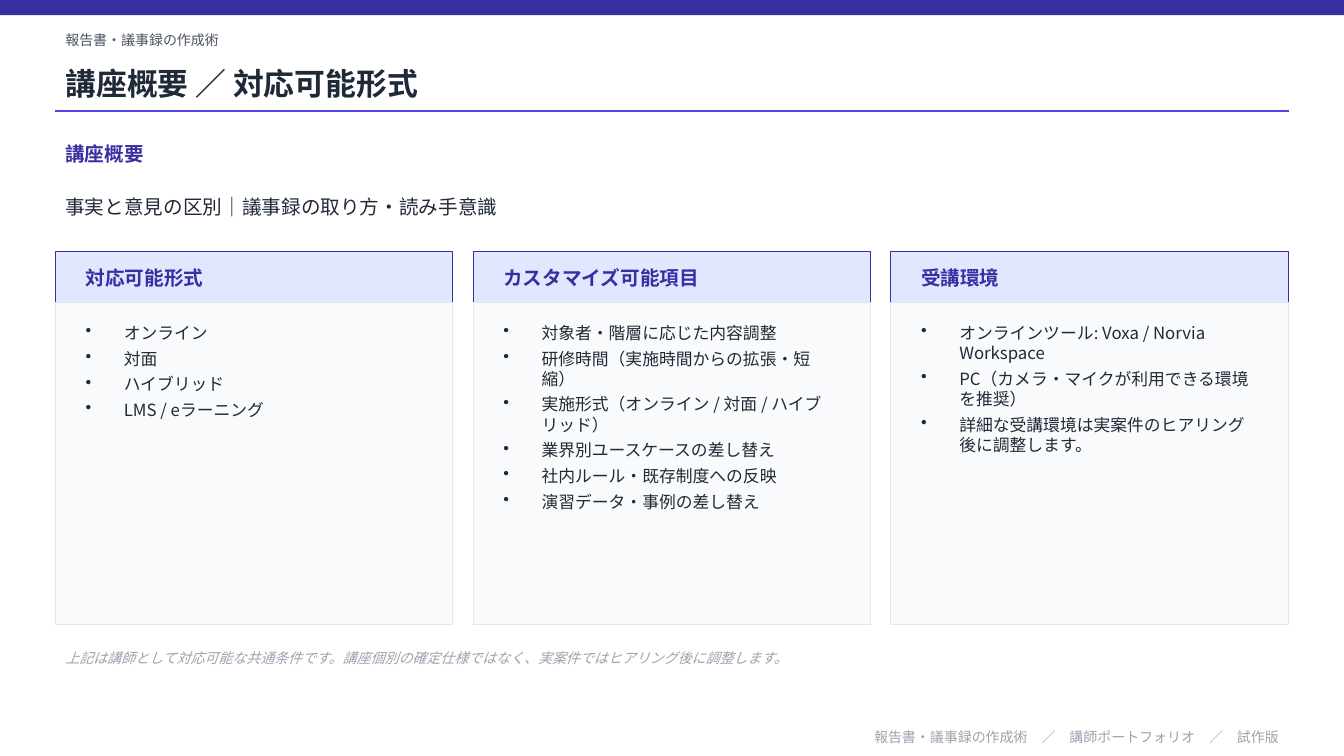
from lxml.etree import SubElement
from pptx import Presentation
from pptx.dml.color import RGBColor
from pptx.enum.shapes import MSO_CONNECTOR as Connector, MSO_SHAPE as Shape
from pptx.enum.text import MSO_ANCHOR as Anchor, MSO_AUTO_SIZE as AutoSize, PP_ALIGN as Align
from pptx.oxml.ns import qn
from pptx.util import Inches, Pt

# Content
COURSE = "報告書・議事録の作成術"
TITLE = "講座概要 ／ 対応可能形式"
SECTION = "講座概要"
SUMMARY = "事実と意見の区別｜議事録の取り方・読み手意識"
CARDS = [
    ("対応可能形式", ["オンライン", "対面", "ハイブリッド", "LMS / eラーニング"]),
    ("カスタマイズ可能項目", [
        "対象者・階層に応じた内容調整",
        "研修時間（実施時間からの拡張・短縮）",
        "実施形式（オンライン / 対面 / ハイブリッド）",
        "業界別ユースケースの差し替え",
        "社内ルール・既存制度への反映",
        "演習データ・事例の差し替え",
    ]),
    ("受講環境", [
        "オンラインツール: Voxa / Norvia Workspace",
        "PC（カメラ・マイクが利用できる環境を推奨）",
        "詳細な受講環境は実案件のヒアリング後に調整します。",
    ]),
]
NOTE = "上記は講師として対応可能な共通条件です。講座個別の確定仕様ではなく、実案件ではヒアリング後に調整します。"
FOOTER = COURSE + "　／　講師ポートフォリオ　／　試作版"

# Style and layout
FONT = "Noto Sans CJK JP"
INDIGO, VIOLET, PALE = "3730A3", "4F46E5", "E0E7FF"
INK, SLATE, MUTED = "1F2937", "4B5563", "9CA3AF"
PANEL, BORDER = "F9FAFB", "E5E7EB"
PAGE_WIDTH, PAGE_HEIGHT = 13.33, 7.5
MARGIN, GAP, PADDING = 0.55, 0.2, 0.2
CONTENT_WIDTH = PAGE_WIDTH - 2 * MARGIN
CARD_WIDTH = (CONTENT_WIDTH - GAP * (len(CARDS) - 1)) / len(CARDS)
HEAD_TOP, HEAD_HEIGHT, BODY_HEIGHT = 2.5, 0.5, 3.2
BODY_TOP = HEAD_TOP + HEAD_HEIGHT


def color(value):
    return RGBColor.from_string(value)


def add_bullet(para):
    props = para._p.get_or_add_pPr()
    props.set("marL", str(Inches(0.38)))
    props.set("indent", str(-Inches(0.38)))
    SubElement(props, qn("a:buChar")).set("char", "•")


def write(box, lines, size=10, ink=INK, bold=False, italic=False,
          align=Align.LEFT, anchor=Anchor.MIDDLE, bullets=False):
    frame = box.text_frame
    frame.word_wrap = True
    frame.auto_size = AutoSize.NONE
    frame.vertical_anchor = anchor
    for index, line in enumerate(lines):
        para = frame.paragraphs[0] if index == 0 else frame.add_paragraph()
        para.alignment = align
        if bullets:
            add_bullet(para)
            para.space_after = Pt(4)
        span = para.add_run()
        span.text = line
        font = span.font
        font.size, font.bold, font.italic = Pt(size), bold, italic
        font.color.rgb = color(ink)
        font.name = FONT
        SubElement(span._r.get_or_add_rPr(), qn("a:ea")).set("typeface", FONT)


def add_text(page, lines, left, top, width, height, **style):
    box = page.shapes.add_textbox(*map(Inches, (left, top, width, height)))
    write(box, lines, **style)


def add_block(page, left, top, width, height, fill, line=None):
    block = page.shapes.add_shape(Shape.RECTANGLE, *map(Inches, (left, top, width, height)))
    block.shadow.inherit = False
    block.fill.solid()
    block.fill.fore_color.rgb = color(fill)
    if line:
        block.line.color.rgb = color(line)
        block.line.width = Pt(0.75)
    else:
        block.line.fill.background()


def add_card(page, left, heading, items):
    text_left, text_width = left + PADDING, CARD_WIDTH - 2 * PADDING
    add_block(page, left, HEAD_TOP, CARD_WIDTH, HEAD_HEIGHT, PALE, INDIGO)
    add_text(page, [heading], text_left, HEAD_TOP, text_width, HEAD_HEIGHT,
             size=14, ink=INDIGO, bold=True)
    add_block(page, left, BODY_TOP, CARD_WIDTH, BODY_HEIGHT, PANEL, BORDER)
    add_text(page, items, text_left, BODY_TOP + 0.15, text_width, BODY_HEIGHT - 0.35,
             size=12, anchor=Anchor.TOP, bullets=True)


def main():
    deck = Presentation()
    deck.slide_width, deck.slide_height = Inches(PAGE_WIDTH), Inches(PAGE_HEIGHT)
    page = deck.slides.add_slide(deck.slide_layouts[5])

    # Header
    add_block(page, 0, 0, PAGE_WIDTH, 0.15, INDIGO)
    add_text(page, [COURSE], MARGIN, 0.25, CONTENT_WIDTH, 0.3, ink=SLATE)
    title = page.shapes.title
    title.left, title.top, title.width, title.height = map(
        Inches, (MARGIN, 0.55, CONTENT_WIDTH, 0.55))
    write(title, [TITLE], size=22, bold=True)
    rule = page.shapes.add_connector(Connector.STRAIGHT, *map(
        Inches, (MARGIN, 1.1, MARGIN + CONTENT_WIDTH, 1.1)))
    rule.line.color.rgb = color(VIOLET)
    rule.line.width = Pt(1)
    SubElement(rule._element.spPr, qn("a:effectLst"))

    # Overview
    add_text(page, [SECTION], MARGIN, 1.35, CONTENT_WIDTH, 0.35,
             size=14, ink=INDIGO, bold=True)
    add_text(page, [SUMMARY], MARGIN, 1.75, CONTENT_WIDTH, 0.6, size=14)

    # Cards
    for index, (heading, items) in enumerate(CARDS):
        add_card(page, MARGIN + index * (CARD_WIDTH + GAP), heading, items)

    # Note and footer
    add_text(page, [NOTE], MARGIN, 6.35, CONTENT_WIDTH, 0.35, ink=MUTED, italic=True)
    add_text(page, [FOOTER], MARGIN, 7.2, CONTENT_WIDTH, 0.22, ink=MUTED, align=Align.RIGHT)

    deck.save("out.pptx")


if __name__ == "__main__":
    main()
